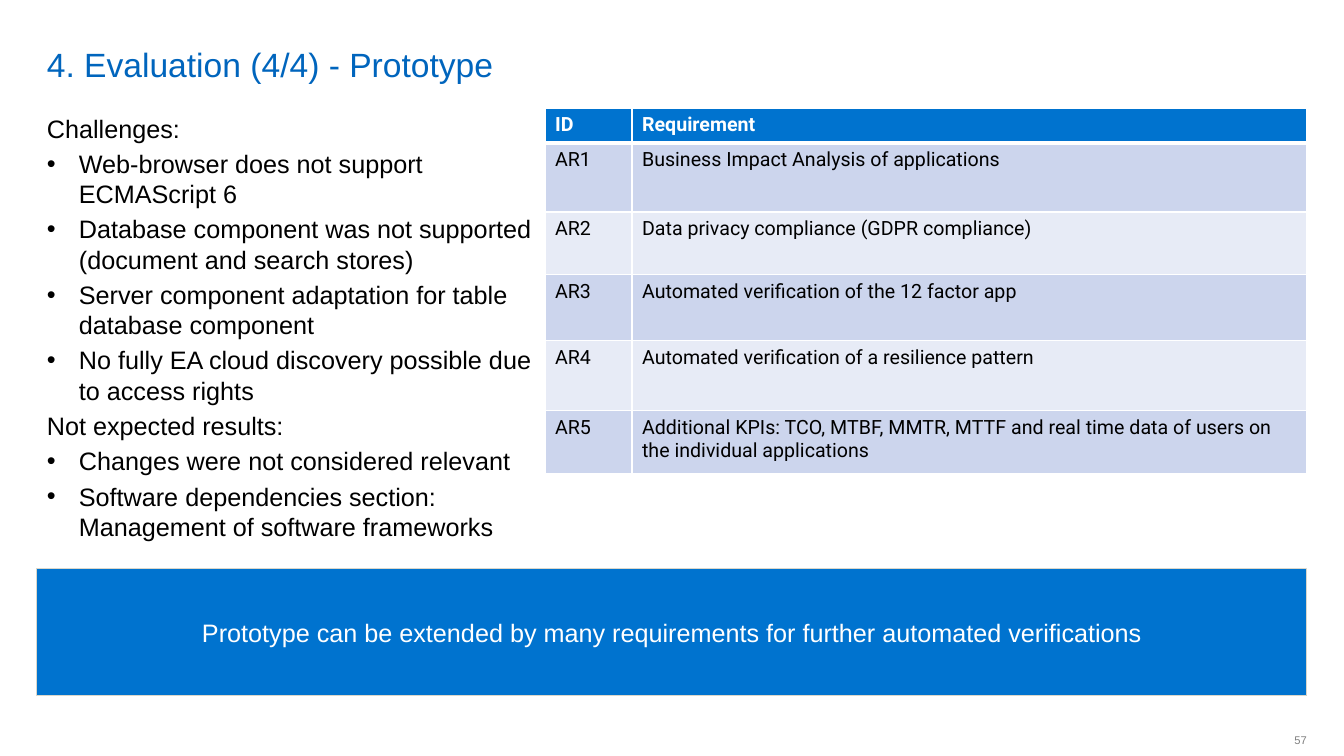
import pptx
import pptx.dml.color
import pptx.enum.shapes
import pptx.enum.text
import pptx.oxml
import pptx.oxml.ns
import pptx.util

TITLE = "4. Evaluation (4/4) - Prototype"
FINDINGS = [
    ("Challenges:", [
        "Web-browser does not support ECMAScript 6",
        "Database component was not supported (document and search stores)",
        "Server component adaptation for table database component",
        "No fully EA cloud discovery possible due to access rights",
    ]),
    ("Not expected results:", [
        "Changes were not considered relevant",
        "Software dependencies section: Management of software frameworks",
    ]),
]
REQUIREMENTS = [
    ("ID", "Requirement"),
    ("AR1", "Business Impact Analysis of applications"),
    ("AR2", "Data privacy compliance (GDPR compliance)"),
    ("AR3", "Automated verification of the 12 factor app"),
    ("AR4", "Automated verification of a resilience pattern"),
    ("AR5", "Additional KPIs: TCO, MTBF, MMTR, MTTF and real time data of users "
            "on the individual applications"),
]
CONCLUSION = "Prototype can be extended by many requirements for further automated verifications"
PAGE_NUMBER = "57"

COLORS = {
    "title": "0065BD", "text": "000000", "number": "808080", "white": "FFFFFF",
    "accent": "0073CF", "outline": "DAD7CB", "odd": "CCD5ED", "even": "E7EBF6",
}
LEFT, RIGHT, CONTENT_TOP, TABLE_LEFT = 37, 1307, 108, 545
ID_WIDTH = 87
ROW_HEIGHTS = [35, 69, 63, 66, 70, 63]
BULLET_INDENT = 32
ANCHOR = pptx.enum.text.MSO_ANCHOR
ALIGN = pptx.enum.text.PP_ALIGN


def px(length):
    return pptx.util.Emu(round(length * 914400 / 100.8))


def color(name):
    return pptx.dml.color.RGBColor.from_string(COLORS[name])


def style(para, size, color_name, font="Arial", bold=False):
    para.font.size = pptx.util.Pt(size)
    para.font.name = font
    para.font.bold = bold
    para.font.color.rgb = color(color_name)


def add_box(page, left, top, width, height, anchor=ANCHOR.TOP, wrap=True):
    frame = page.shapes.add_textbox(px(left), px(top), px(width), px(height)).text_frame
    frame.word_wrap = wrap
    frame.vertical_anchor = anchor
    return frame


def add_bullet(para):
    properties = para._p.get_or_add_pPr()
    properties.set("marL", str(px(BULLET_INDENT)))
    properties.set("indent", str(-px(BULLET_INDENT)))
    namespace = pptx.oxml.ns.nsdecls("a")
    properties.append(pptx.oxml.parse_xml(f'<a:buFont {namespace} typeface="Arial"/>'))
    properties.append(pptx.oxml.parse_xml(f'<a:buChar {namespace} char="•"/>'))


def add_borders(cell, top_points, bottom_points):
    properties = cell._tc.get_or_add_tcPr()
    for side, points in (("L", 1), ("R", 1), ("T", top_points), ("B", bottom_points)):
        properties.append(pptx.oxml.parse_xml(
            f'<a:ln{side} {pptx.oxml.ns.nsdecls("a")} w="{pptx.util.Pt(points)}">'
            f'<a:solidFill><a:srgbClr val="{COLORS["white"]}"/></a:solidFill></a:ln{side}>'))


def add_title(page):
    frame = add_box(page, LEFT, 5, 1167, 79, ANCHOR.BOTTOM)
    frame.margin_top = frame.margin_bottom = 0
    frame.text = TITLE
    style(frame.paragraphs[0], 24, "title")


def add_findings(page):
    frame = add_box(page, LEFT, CONTENT_TOP, TABLE_LEFT - LEFT, 431)
    lines = []
    for heading, points in FINDINGS:
        lines += [(heading, False)] + [(point, True) for point in points]
    for index, (text, bulleted) in enumerate(lines):
        para = frame.add_paragraph() if index else frame.paragraphs[0]
        para.text = text
        if index:
            para.space_before = pptx.util.Pt(3.6)
        if bulleted:
            add_bullet(para)
        style(para, 18, "text")


def add_requirements(page):
    width = RIGHT - TABLE_LEFT
    table = page.shapes.add_table(
        len(REQUIREMENTS), 2, px(TABLE_LEFT), px(CONTENT_TOP), px(width),
        px(sum(ROW_HEIGHTS))).table
    table.columns[0].width = px(ID_WIDTH)
    table.columns[1].width = px(width - ID_WIDTH)
    for row, texts in enumerate(REQUIREMENTS):
        table.rows[row].height = px(ROW_HEIGHTS[row])
        header = row == 0
        fill = "accent" if header else "odd" if row % 2 else "even"
        for column, text in enumerate(texts):
            cell = table.cell(row, column)
            cell.text = text
            add_borders(cell, 3 if row == 1 else 1, 3 if header else 1)
            cell.fill.solid()
            cell.fill.fore_color.rgb = color(fill)
            style(cell.text_frame.paragraphs[0], 14, "white" if header else "text",
                  "Roboto", header)


def add_conclusion(page):
    banner = page.shapes.add_shape(
        pptx.enum.shapes.MSO_SHAPE.RECTANGLE, px(LEFT), px(569), px(RIGHT - LEFT), px(127))
    banner.shadow.inherit = False
    banner.fill.solid()
    banner.fill.fore_color.rgb = color("accent")
    banner.line.color.rgb = color("outline")
    banner.line.width = pptx.util.Pt(0.75)
    banner.text_frame.text = CONCLUSION
    banner.text_frame.vertical_anchor = ANCHOR.MIDDLE
    para = banner.text_frame.paragraphs[0]
    para.alignment = ALIGN.CENTER
    style(para, 18, "white")


def add_page_number(page):
    frame = add_box(page, RIGHT - 36, 724, 36, 32, ANCHOR.MIDDLE, wrap=False)
    frame.margin_right = 0
    frame.text = PAGE_NUMBER
    frame.paragraphs[0].alignment = ALIGN.RIGHT
    style(frame.paragraphs[0], 8, "number")


def main():
    deck = pptx.Presentation()
    deck.slide_width, deck.slide_height = px(1344), px(756)
    page = deck.slides.add_slide(deck.slide_layouts[6])
    add_title(page)
    add_findings(page)
    add_page_number(page)
    add_conclusion(page)
    add_requirements(page)
    deck.save("out.pptx")


if __name__ == "__main__":
    main()
